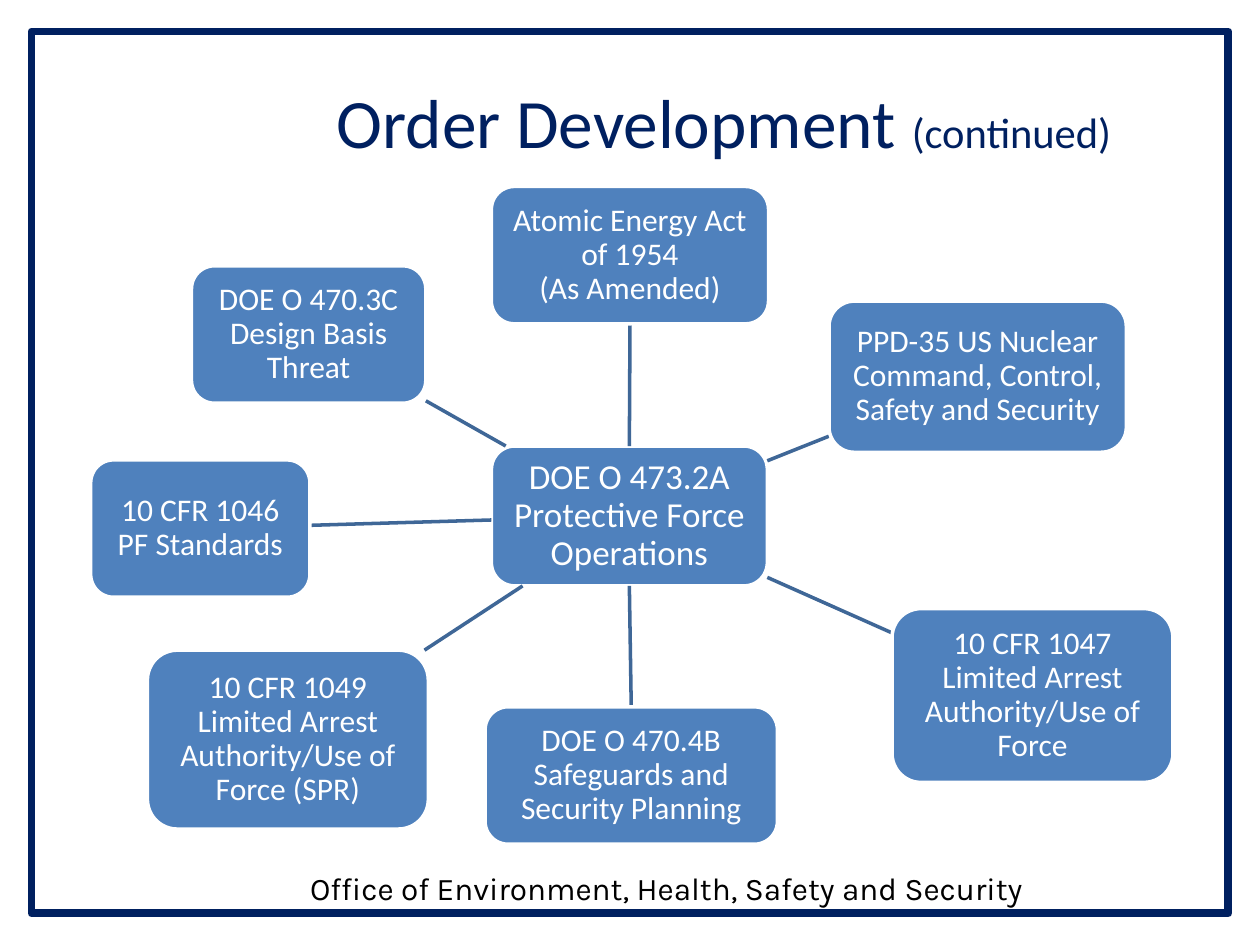
from dataclasses import dataclass

import pptx
import pptx.dml.color
import pptx.enum.shapes
import pptx.enum.text
import pptx.util
from lxml import etree

PX = 9144  # 100 px to the inch
SHAPE = pptx.enum.shapes.MSO_SHAPE
TEXT = pptx.enum.text


@dataclass(frozen=True)
class Theme:
    navy: str = "002060"
    box: str = "4F81BD"
    link: str = "3F6797"
    white: str = "FFFFFF"
    black: str = "000000"
    font: str = "Calibri"
    footer_font: str = "Karla"
    title_size: float = 39.6
    subtitle_size: float = 24.3
    hub_size: float = 20
    node_size: float = 18
    footer_size: float = 18
    border_width: float = 4.5
    line_width: float = 2


THEME = Theme()

HUB_BOX = (390, 354, 219, 111)
HUB_TEXT = "DOE O 473.2A\nProtective Force Operations"

# Box, text, and (hub side, node side) where the link joins the middles of sides
NODES = [
    ((152, 211, 186, 109), "DOE O 470.3C\nDesign Basis Threat", None),
    ((708, 483, 223, 138), "10 CFR 1047 Limited Arrest Authority/Use of Force", None),
    ((658, 239, 236, 120), "PPD-35 US Nuclear Command, Control, Safety and Security", None),
    ((72, 365, 174, 109), "10 CFR 1046\nPF Standards", None),
    ((117, 516, 223, 142), "10 CFR 1049\vLimited Arrest Authority/Use of Force (SPR)", None),
    ((385, 561, 232, 109), "DOE O 470.4B Safeguards and Security Planning", (2, 0)),
    ((390, 148, 220, 109), "Atomic Energy Act of 1954\n(As Amended)", (0, 2)),
]


def emu(lengths):
    return [round(n * PX) for n in lengths]


def rgb(value):
    return pptx.dml.color.RGBColor.from_string(value)


def set_font(font, name, size, color):
    font.name = name
    font.size = pptx.util.Pt(size)
    font.color.rgb = rgb(color)


def set_line(line, color, width):
    line.color.rgb = rgb(color)
    line.width = pptx.util.Pt(width)


def add_border(s, box):
    sp = s.shapes.add_shape(SHAPE.RECTANGLE, *emu(box))
    sp.shadow.inherit = False
    sp.fill.background()
    set_line(sp.line, THEME.navy, THEME.border_width)


def add_line_of_text(s, box, runs):
    """Centred text box holding one paragraph of (text, font, size, colour) runs."""
    tf = s.shapes.add_textbox(*emu(box)).text_frame
    tf.word_wrap = True
    p = tf.paragraphs[0]
    p.alignment = TEXT.PP_ALIGN.CENTER
    for text, *style in runs:
        r = p.add_run()
        r.text = text
        set_font(r.font, *style)
    return tf


def add_title(s, box):
    tf = add_line_of_text(s, box, [
        ("Order Development ", THEME.font, THEME.title_size, THEME.navy),
        ("(continued)", THEME.font, THEME.subtitle_size, THEME.navy),
    ])
    tf.vertical_anchor = TEXT.MSO_ANCHOR.MIDDLE


def add_footer(s, box):
    tf = add_line_of_text(s, box, [
        ("Office of Environment, Health, Safety and Security",
         THEME.footer_font, THEME.footer_size, THEME.black),
    ])
    tf.auto_size = TEXT.MSO_AUTO_SIZE.SHAPE_TO_FIT_TEXT


def add_node(s, box, text, size, inset):
    sp = s.shapes.add_shape(SHAPE.ROUNDED_RECTANGLE, *emu(box))
    sp.shadow.inherit = False
    sp.fill.solid()
    sp.fill.fore_color.rgb = rgb(THEME.box)
    set_line(sp.line, THEME.white, THEME.line_width)
    tf = sp.text_frame
    tf.word_wrap = True
    tf.vertical_anchor = TEXT.MSO_ANCHOR.MIDDLE
    tf.margin_left = tf.margin_right = tf.margin_top = tf.margin_bottom = inset * PX
    tf.text = text
    for p in tf.paragraphs:
        p.alignment = TEXT.PP_ALIGN.CENTER
        p.line_spacing = 0.9
        for r in p.runs:
            set_font(r.font, THEME.font, size, THEME.white)
    return sp


def center(box):
    x, y, w, h = box
    return x + w / 2, y + h / 2


def edge_point(box, target):
    """Point where the line from the centre of box to target leaves the box."""
    (cx, cy), (tx, ty) = center(box), center(target)
    dx, dy = tx - cx, ty - cy
    t = 1 / max(abs(dx) / (box[2] / 2), abs(dy) / (box[3] / 2))
    return cx + t * dx, cy + t * dy


def add_link(s, box, target):
    ends = edge_point(box, target) + edge_point(target, box)
    c = s.shapes.add_connector(pptx.enum.shapes.MSO_CONNECTOR.STRAIGHT, *emu(ends))
    set_line(c.line, THEME.link, THEME.line_width)
    sp_pr = c.element.spPr
    etree.SubElement(sp_pr, pptx.oxml.ns.qn("a:effectLst"))
    return c


def add_radial_diagram(s, hub_box, hub_text, nodes):
    hub = add_node(s, hub_box, hub_text, THEME.hub_size, 6)
    for box, text, sides in nodes:
        link = add_link(s, hub_box, box)
        node = add_node(s, box, text, THEME.node_size, 5)
        if sides:
            link.begin_connect(hub, sides[0])
            link.end_connect(node, sides[1])


def main():
    prs = pptx.Presentation()
    prs.slide_width, prs.slide_height = emu((1000, 750))
    s = prs.slides.add_slide(prs.slide_layouts[6])
    add_border(s, (25, 25, 950, 700))
    add_footer(s, (225, 685, 608, 40))
    add_title(s, (192, 60, 765, 72))
    add_radial_diagram(s, HUB_BOX, HUB_TEXT, NODES)
    prs.save("out.pptx")


if __name__ == "__main__":
    main()
